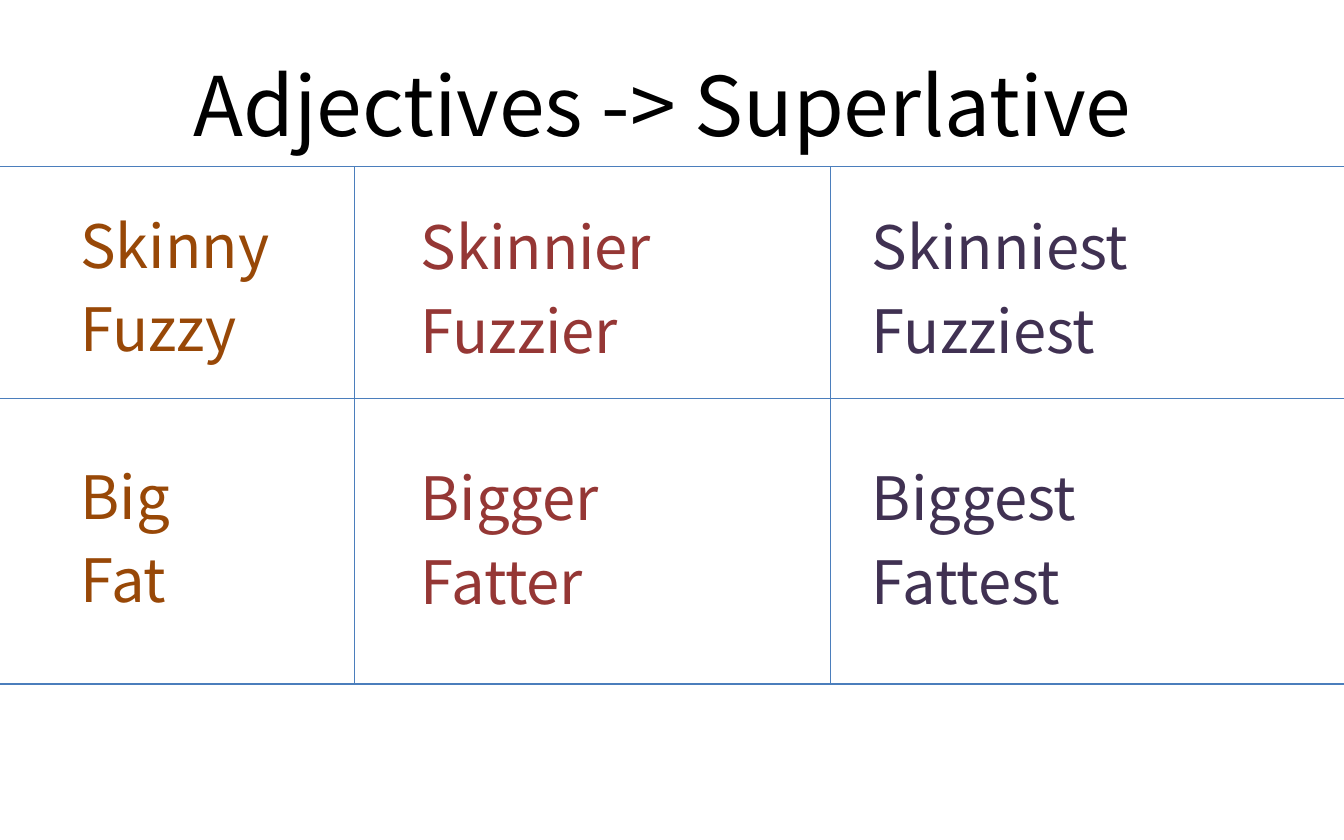
from lxml import etree
from pptx import Presentation
from pptx.dml.color import RGBColor
from pptx.enum.shapes import MSO_CONNECTOR
from pptx.enum.text import MSO_ANCHOR, PP_ALIGN
from pptx.oxml.ns import qn
from pptx.util import Pt

STRAIGHT = MSO_CONNECTOR.STRAIGHT
TOP, MIDDLE = MSO_ANCHOR.TOP, MSO_ANCHOR.MIDDLE
LEFT, CENTER = PP_ALIGN.LEFT, PP_ALIGN.CENTER

BLACK = RGBColor(0x00, 0x00, 0x00)
BROWN = RGBColor(0x98, 0x48, 0x07)
RED = RGBColor(0x95, 0x37, 0x35)
PURPLE = RGBColor(0x40, 0x31, 0x52)
BLUE = RGBColor(0x4B, 0x7E, 0xBC)

FONT = "Noto Sans CJK KR"
PAGE_WIDTH, PAGE_HEIGHT = 720, 450
WORD_SIZE = 32
LINE_HEIGHT = 1.2 * WORD_SIZE
WORD_GAP = 0.2 * WORD_SIZE
GROUP_GAP = LINE_HEIGHT + 2 * WORD_GAP

COLUMNS = [
    ((36, 105.1, 648, 296.6), BROWN, [["Skinny", "Fuzzy"], ["Big", "Fat"]]),
    ((218.2, 105.8, 478, 296.6), RED, [["Skinnier", "Fuzzier"], ["Bigger", "Fatter"]]),
    ((460, 105.8, 260, 296.6), PURPLE, [["Skinniest", "Fuzziest"], ["Biggest", "Fattest"]]),
]


def add_text_frame(page, box, anchor=TOP, top_inset=3.6):
    shape = page.shapes.add_textbox(*(Pt(length) for length in box))
    frame = shape.text_frame
    frame.word_wrap = True
    frame.vertical_anchor = anchor
    frame.margin_top = Pt(top_inset)
    return frame


def write_text(para, text, size=WORD_SIZE, color=BLACK, align=LEFT, before=0, line_height=None):
    para.alignment = align
    para.space_before = Pt(before)
    if line_height:
        para.line_spacing = Pt(line_height)
    span = para.add_run()
    span.text = text
    span.font.name = FONT
    span.font.size = Pt(size)
    span.font.color.rgb = color


def add_title(page, box, text):
    frame = add_text_frame(page, box, anchor=MIDDLE)
    write_text(frame.paragraphs[0], text, size=44, align=CENTER)


def add_word_column(page, box, color, groups):
    frame = add_text_frame(page, box, top_inset=6.6)
    for group_index, group in enumerate(groups):
        for word_index, word in enumerate(group):
            is_first = group_index == word_index == 0
            para = frame.paragraphs[0] if is_first else frame.add_paragraph()
            before = 0 if is_first else WORD_GAP if word_index else GROUP_GAP
            write_text(para, word, color=color, before=before, line_height=LINE_HEIGHT)


def add_rule(page, start, end):
    rule = page.shapes.add_connector(STRAIGHT, *(Pt(length) for length in start + end))
    rule.line.color.rgb = BLUE
    rule.line.width = Pt(0.75)
    etree.SubElement(rule._element.spPr, qn("a:effectLst"))


def add_grid(page, box, row_offsets, column_offsets):
    left, top, width, height = box
    for offset in row_offsets:
        add_rule(page, (left, top + offset), (left + width, top + offset))
    for offset in column_offsets:
        add_rule(page, (left + offset, top), (left + offset, top + height))


def main():
    deck = Presentation()
    deck.slide_width, deck.slide_height = Pt(PAGE_WIDTH), Pt(PAGE_HEIGHT)
    page = deck.slides.add_slide(deck.slide_layouts[6])
    add_title(page, (36, 18, 648, 74.9), "Adjectives -> Superlative ")
    add_grid(page, (0, 89.2, PAGE_WIDTH, 277.3), (0, 124.4, 277.3), (190, 444.9))
    for box, color, groups in COLUMNS:
        add_word_column(page, box, color, groups)
    deck.save("out.pptx")


if __name__ == "__main__":
    main()
